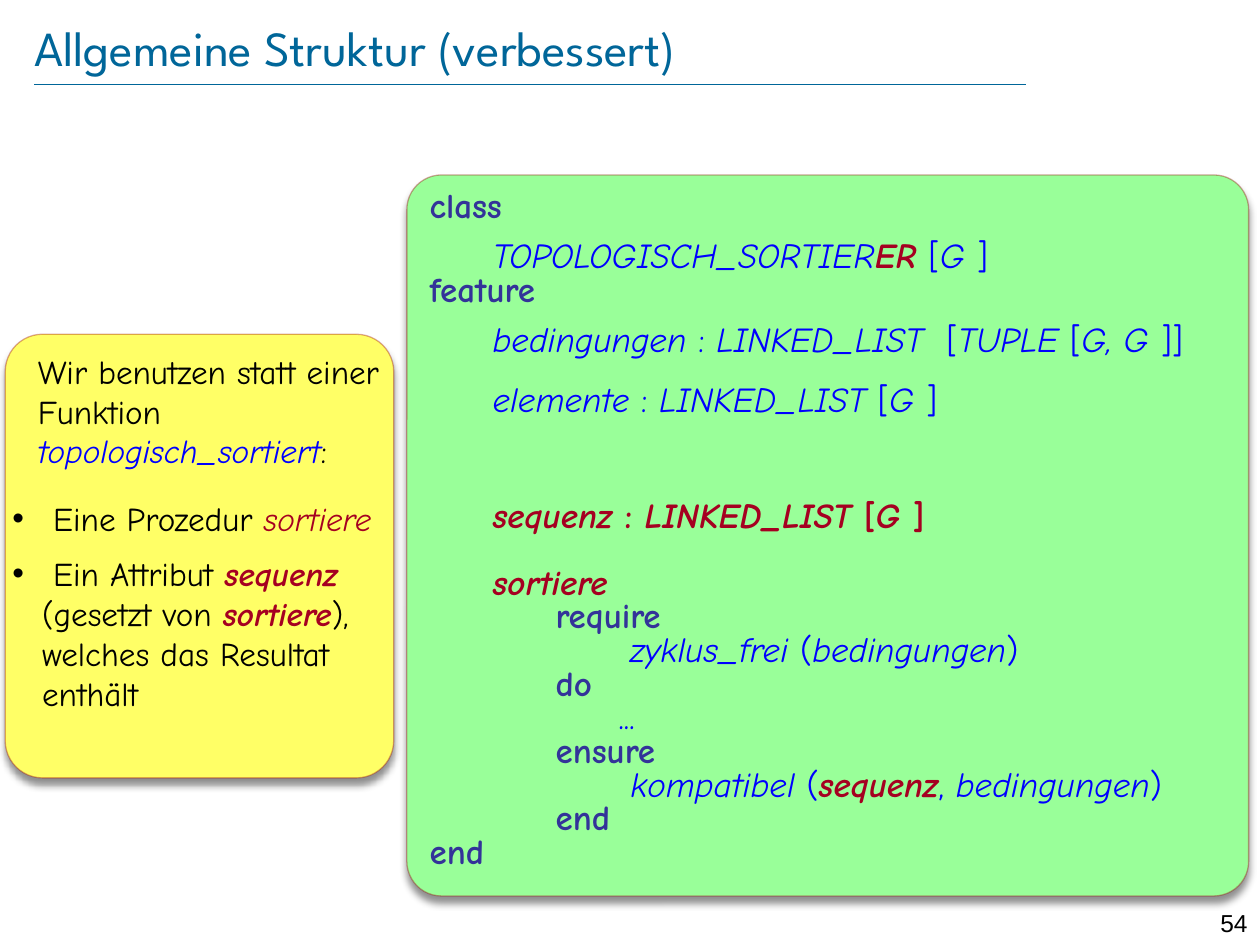
from lxml import etree
from pptx import Presentation
from pptx.dml.color import RGBColor
from pptx.enum.shapes import MSO_CONNECTOR, MSO_SHAPE
from pptx.enum.text import MSO_ANCHOR, MSO_AUTO_SIZE, PP_ALIGN
from pptx.oxml import parse_xml
from pptx.oxml.ns import qn
from pptx.util import Pt

LINE, ROUND = MSO_CONNECTOR.STRAIGHT, MSO_SHAPE.ROUNDED_RECTANGLE
TOP, MIDDLE = MSO_ANCHOR.TOP, MSO_ANCHOR.MIDDLE
LEFT, RIGHT = PP_ALIGN.LEFT, PP_ALIGN.RIGHT
FIXED = MSO_AUTO_SIZE.NONE
NS = 'xmlns:a="http://schemas.openxmlformats.org/drawingml/2006/main"'
TEAL = "006699"
TABS = (28, 71, 106)

STYLES = {
    "plain": dict(color="000000"),
    "key": dict(color="333399", bold=True),
    "sign": dict(color="0000FF"),
    "name": dict(color="0000FF", italic=True),
    "soft": dict(color="A50021", italic=True),
    "new": dict(color="A50021", bold=True, italic=True),
    "mark": dict(color="A50021", bold=True),
}

CODE = [
    (0.8, 0, [("key", "class")]),
    (1.2, 0, [("name", "\tTOPOLOGISCH_SORTIER"), ("new", "ER "), ("sign", "["),
              ("name", "G "), ("sign", "]")]),
    (0.8, 0, [("key", "feature")]),
    (1.2, 0, [("name", "\tbedingungen "), ("sign", ":"), ("name", " LINKED_LIST  "),
              ("sign", "["), ("name", "TUPLE"), ("sign", " ["), ("name", "G, G "),
              ("sign", "]]")]),
    (0.6, 19, [("name", "\telemente "), ("sign", ":"), ("name", " LINKED_LIST "),
               ("sign", "["), ("name", "G "), ("sign", "]")]),
    (2.0, 19, [("new", "\tsequenz "), ("mark", ": "), ("new", "LINKED_LIST"),
               ("mark", " ["), ("new", "G "), ("mark", "]")]),
    (0.8, 19, [("new", "\tsortiere")]),
    (0.8, 0, [("key", "\t\trequire")]),
    (0.8, 0, [("name", "\t\t\t zyklus_frei"), ("sign", " ("), ("name", "bedingungen"),
              ("sign", ")")]),
    (0.8, 0, [("key", "\t\tdo")]),
    (0.8, 0, [("sign", "\t\t\t...")]),
    (0.8, 0, [("key", "\t\tensure")]),
    (0.8, 0, [("name", "\t\t\t kompatibel"), ("sign", " ("), ("new", "sequenz"),
              ("sign", ", "), ("name", "bedingungen"), ("sign", ")")]),
    (0.8, 0, [("key", "\t\tend")]),
    (0.8, 0, [("key", "end")]),
]

INTRO = [("plain", "Wir benutzen statt einer Funktion "),
         ("name", "topologisch_sortiert"), ("plain", ":")]
POINTS = [
    [("plain", " Eine Prozedur "), ("soft", "sortiere")],
    [("plain", " Ein Attribut "), ("new", "sequenz"), ("plain", " (gesetzt von "),
     ("new", "sortiere"), ("plain", "), welches das Resultat enthält")],
]


def rgb(code):
    return RGBColor.from_string(code)


def write(par, text, size=19, face="Comic Neue", color="000000", bold=False, italic=False):
    run = par.add_run()
    run.text = text
    font = run.font
    font.size, font.name, font.bold, font.italic = Pt(size), face, bold, italic
    font.color.rgb = rgb(color)


def fill_par(par, parts, size):
    for style, text in parts:
        write(par, text, size=size, **STYLES[style])


def place(shape, box):
    shape.left, shape.top, shape.width, shape.height = map(Pt, box)


def add_par(frame, num):
    return frame.paragraphs[0] if num == 0 else frame.add_paragraph()


def add_box(slide, box):
    frame = slide.shapes.add_textbox(*map(Pt, box)).text_frame
    frame.word_wrap = True
    return frame


def paint(shape, color):
    shape.fill.solid()
    shape.fill.fore_color.rgb = rgb(color)
    shape.line.width = Pt(0.75)
    shape.line.color.rgb = rgb("990000")
    edge = shape.line.fill._xPr.find(".//" + qn("a:srgbClr"))
    etree.SubElement(edge, qn("a:alpha"), val="34000")
    shape._element.spPr.append(parse_xml(
        f'<a:effectLst {NS}><a:outerShdw blurRad="{Pt(4)}" dist="{Pt(4)}" dir="5400000" '
        'rotWithShape="0"><a:srgbClr val="000000"><a:alpha val="43000"/></a:srgbClr>'
        '</a:outerShdw></a:effectLst>'))


def draw_head(slide, box):
    left, top, width, height = box
    title = slide.shapes.title
    place(title, box)
    frame = title.text_frame
    frame.auto_size, frame.vertical_anchor = FIXED, MIDDLE
    frame.margin_left = frame.margin_right = frame.margin_top = frame.margin_bottom = 0
    par = frame.paragraphs[0]
    par.alignment = LEFT
    write(par, "Allgemeine Struktur (verbessert)", size=28, face="League Spartan", color=TEAL)
    base = top + height + 4
    rule = slide.shapes.add_connector(LINE, Pt(left), Pt(base), Pt(left + 567), Pt(base))
    rule.line.color.rgb = rgb(TEAL)
    rule.line.width = Pt(0.25)
    etree.SubElement(rule._element.spPr, qn("a:effectLst"))


def draw_code(slide, box):
    body = slide.placeholders[1]
    place(body, box)
    body._element.spPr.append(parse_xml(
        f'<a:prstGeom {NS} prst="roundRect"><a:avLst>'
        '<a:gd name="adj" fmla="val 4800"/></a:avLst></a:prstGeom>'))
    paint(body, "99FF99")
    frame = body.text_frame
    frame.word_wrap, frame.auto_size, frame.vertical_anchor = True, FIXED, TOP
    for num, (pitch, gap, parts) in enumerate(CODE):
        par = add_par(frame, num)
        props = par._p.get_or_add_pPr()
        props.set("marL", "0")
        props.set("indent", "0")
        etree.SubElement(props, qn("a:buNone"))
        stops = etree.SubElement(props, qn("a:tabLst"))
        for tab in TABS:
            etree.SubElement(stops, qn("a:tab"), pos=str(Pt(tab)), algn="l")
        par.line_spacing, par.space_before = pitch, Pt(gap)
        fill_par(par, parts, 20)


def draw_note(slide, box):
    left, top, width, height = box
    card = slide.shapes.add_shape(ROUND, *map(Pt, box))
    card.adjustments[0] = 0.096
    paint(card, "FFFF66")
    intro = add_box(slide, (left + 11.5, top + 6, width - 12, 76))
    fill_par(intro.paragraphs[0], INTRO, 19)
    frame = add_box(slide, (left - 3, top + 90, width + 16, 134))
    for num, parts in enumerate(POINTS):
        par = add_par(frame, num)
        props = par._p.get_or_add_pPr()
        props.set("marL", str(Pt(17)))
        props.set("indent", str(-Pt(17)))
        etree.SubElement(props, qn("a:buFont"), typeface="Arial")
        etree.SubElement(props, qn("a:buChar"), char="•")
        par.space_before = Pt(9 if num else 0)
        fill_par(par, parts, 19)


def draw_page(slide, box):
    par = add_box(slide, box).paragraphs[0]
    par.alignment = RIGHT
    write(par, "54", size=14, face="Arial")


def main():
    deck = Presentation()
    deck.slide_width, deck.slide_height = Pt(720), Pt(540)
    slide = deck.slides.add_slide(deck.slide_layouts[1])
    draw_head(slide, (19.5, 9.5, 639, 34.5))
    draw_note(slide, (3, 191, 222, 253.5))
    draw_code(slide, (232.5, 100, 481, 412))
    draw_page(slide, (680, 515.5, 40, 17))
    deck.save("out.pptx")


if __name__ == "__main__":
    main()
